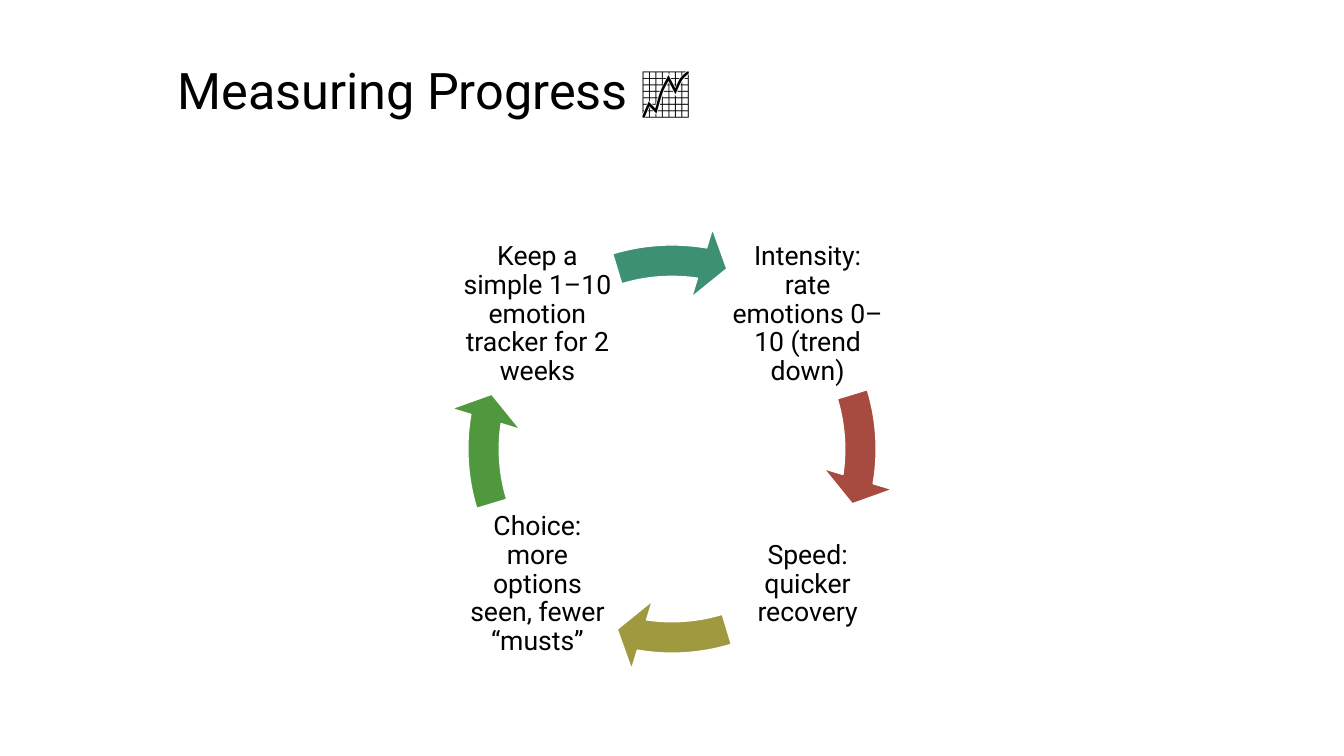
from pptx import Presentation
from pptx import util as u
from pptx.dml.color import RGBColor
from pptx.enum import shapes, text

COLORS = {
    "text": "000000",
    "outline": "FFFFFF",
    "red": "A74B40",
    "olive": "9F9A3F",
    "green": "50983E",
    "teal": "3D9072",
}
STEPS = [
    ("Intensity: rate emotions 0–10 (trend down)", "red", 1, 0),
    ("Speed: quicker recovery", "olive", 1, 1),
    ("Choice: more options seen, fewer “musts”", "green", 0, 1),
    ("Keep a simple 1–10 emotion tracker for 2 weeks", "teal", 0, 0),
]
LEFT, TOP, PITCH, BOX = 4.54, 2.33, 2.68, 1.58
RING_LEFT, RING_TOP, RING_SIZE = 4.44, 2.23, 4.45
QUARTER_TURN, FULL_TURN = 54, 216


class CycleSlide:
    """Holds the style and the current slide, and draws its elements."""

    font = "Roboto"

    def __init__(self, prs):
        self.s = prs.slides.add_slide(prs.slide_layouts[5])

    def color(self, name):
        return RGBColor.from_string(COLORS[name])

    def set_text(self, tf, words, size, align):
        tf.word_wrap = True
        tf.auto_size = text.MSO_AUTO_SIZE.NONE
        p = tf.paragraphs[0]
        p.text = words
        p.alignment = align
        p.line_spacing = 0.9
        p.font.name = self.font
        p.font.size = u.Pt(size)
        p.font.color.rgb = self.color("text")

    def title(self, words):
        sp = self.s.shapes.title
        sp.left, sp.top = u.Inches(1.66), u.Inches(0.6)
        sp.width, sp.height = u.Inches(10.02), u.Inches(1.24)
        sp.text_frame.vertical_anchor = text.MSO_ANCHOR.TOP
        self.set_text(sp.text_frame, words, 36, text.PP_ALIGN.LEFT)

    def label(self, words, col, row):
        sp = self.s.shapes.add_textbox(
            u.Inches(LEFT + col * PITCH), u.Inches(TOP + row * PITCH),
            u.Inches(BOX), u.Inches(BOX))
        tf = sp.text_frame
        tf.margin_left = tf.margin_right = u.Inches(0.03)
        tf.margin_top = tf.margin_bottom = u.Inches(0.03)
        tf.vertical_anchor = text.MSO_ANCHOR.MIDDLE
        self.set_text(tf, words, 19, text.PP_ALIGN.CENTER)

    def arrow(self, index, color):
        sp = self.s.shapes.add_shape(
            shapes.MSO_SHAPE.CIRCULAR_ARROW,
            u.Inches(RING_LEFT), u.Inches(RING_TOP),
            u.Inches(RING_SIZE), u.Inches(RING_SIZE))
        turn = index * QUARTER_TURN
        values = (0.07, 4.65, 5.5 + turn, (205.85 + turn) % FULL_TURN, 0.08)
        for i, value in enumerate(values):
            sp.adjustments[i] = value
        sp.shadow.inherit = False
        sp.fill.solid()
        sp.fill.fore_color.rgb = self.color(color)
        sp.line.color.rgb = self.color("outline")
        sp.line.width = u.Pt(1)


def main():
    prs = Presentation()
    prs.slide_width, prs.slide_height = u.Inches(13.33), u.Inches(7.5)
    slide = CycleSlide(prs)
    slide.title("Measuring Progress 📈")
    for index, (words, color, col, row) in enumerate(STEPS):
        slide.label(words, col, row)
        slide.arrow(index, color)
    prs.save("out.pptx")


if __name__ == "__main__":
    main()
